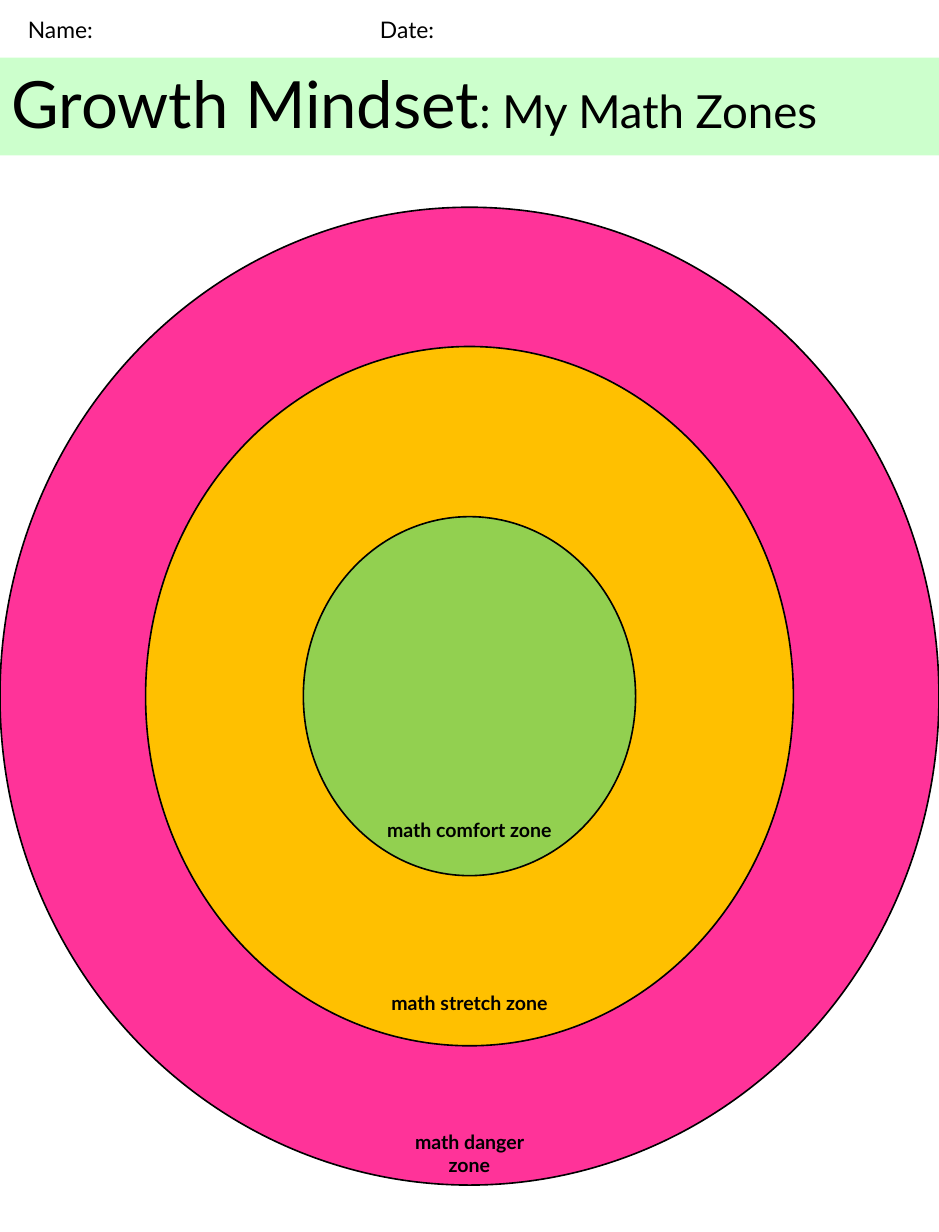
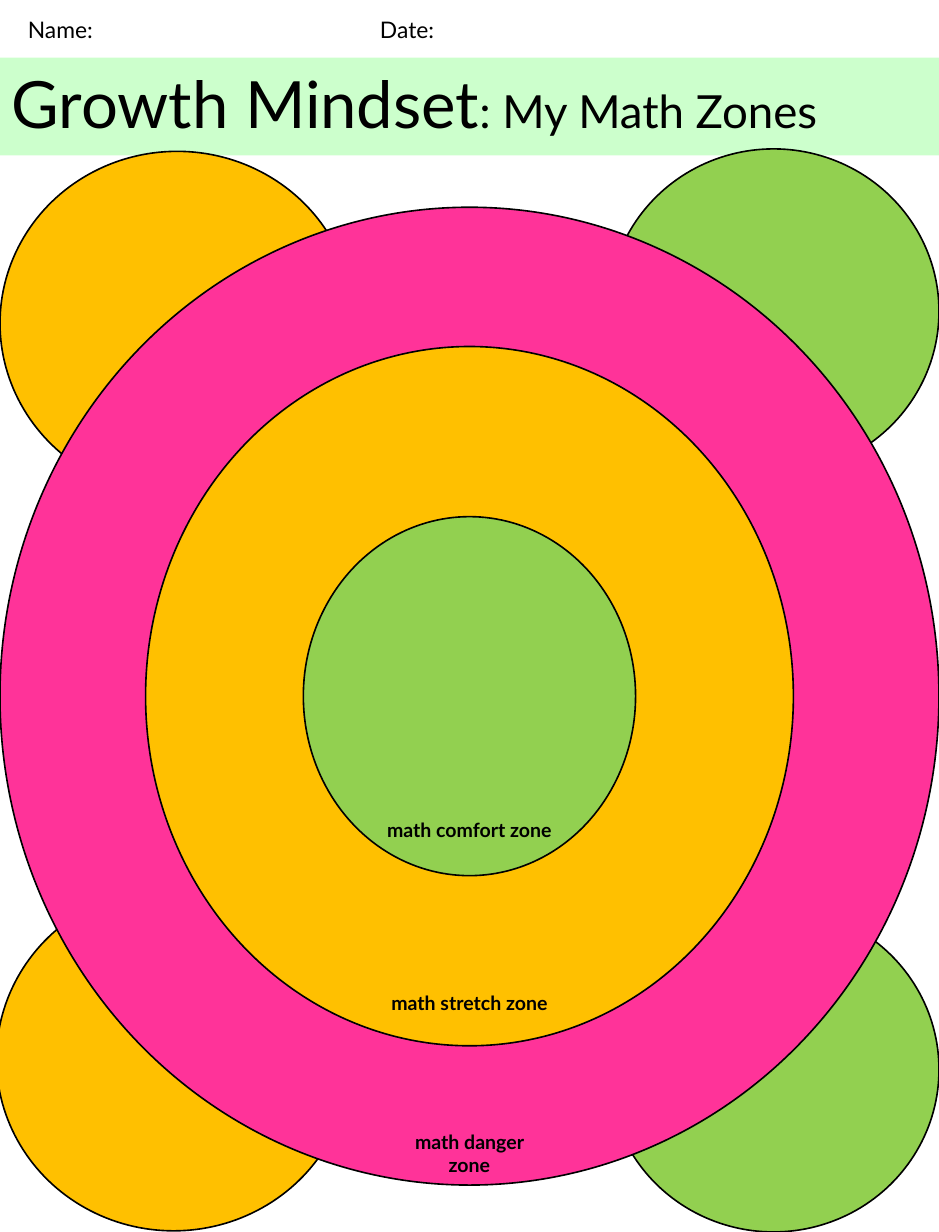
from lxml import etree
from pptx import Presentation
from pptx.dml.color import RGBColor
from pptx.enum import shapes, text
from pptx.oxml import ns
from pptx.util import Pt

WIDTH, HEIGHT = 576, 756
CENTRE_X, CENTRE_Y = WIDTH / 2, 427.2
FONT = "Lato"
COLOURS = {
    "ink": "000000",
    "band": "CCFFCC",
    "danger": "FF3399",
    "stretch": "FFC000",
    "comfort": "92D050",
}

# zone, width, height, label top, label width; outermost first
ZONES = [
    ("danger", 576, 600, 689.8, 103),
    ("stretch", 397.4, 429.1, 604.8, 111.6),
    ("comfort", 203.8, 220.3, 498.2, 119.5),
]

# zone, left, top, width, height
CORNERS = [
    ("stretch", -2.2, 544.3, 217.4, 211),
    ("comfort", 373, 556.6, 203, 199.4),
    ("stretch", 0, 92.9, 217.4, 211),
    ("comfort", 373, 91.4, 203, 199.4),
]


def colour(name):
    return RGBColor.from_string(COLOURS[name])


def set_font(font, size, bold=False):
    font.name = FONT
    font.size = Pt(size)
    font.bold = bold
    font.color.rgb = colour("ink")


def add_circle(slide, zone, left, top, width, height):
    circle = slide.shapes.add_shape(
        shapes.MSO_SHAPE.OVAL, Pt(left), Pt(top), Pt(width), Pt(height))
    circle.shadow.inherit = False
    circle.fill.solid()
    circle.fill.fore_color.rgb = colour(zone)
    circle.line.color.rgb = colour("ink")
    circle.line.width = Pt(1)


def add_text(slide, words, left, top, width, height, size, bold=False,
             align=text.PP_ALIGN.LEFT):
    frame = slide.shapes.add_textbox(
        Pt(left), Pt(top), Pt(width), Pt(height)).text_frame
    frame.word_wrap = True
    frame.auto_size = text.MSO_AUTO_SIZE.SHAPE_TO_FIT_TEXT
    line = frame.paragraphs[0]
    line.text = words
    line.alignment = align
    set_font(line.font, size, bold)
    return line


def add_title_band(slide):
    band = slide.shapes.title
    band.left, band.top, band.width, band.height = Pt(0), Pt(35.3), Pt(WIDTH), Pt(55.4)
    band.fill.solid()
    band.fill.fore_color.rgb = colour("band")
    frame = band.text_frame
    frame.auto_size = text.MSO_AUTO_SIZE.SHAPE_TO_FIT_TEXT
    frame.vertical_anchor = text.MSO_ANCHOR.TOP
    heading = frame.paragraphs[0]
    heading.alignment = text.PP_ALIGN.LEFT
    for words, size in (("Growth Mindset", 40), (": My Math Zones", 28)):
        run = heading.add_run()
        run.text = words
        set_font(run.font, size)


def add_name_line(slide):
    line = add_text(slide, "Name:\t\t\tDate:", 10, 5.8, 537, 24.5, 14)
    # Tab stops one inch apart
    stops = etree.Element(ns.qn("a:tabLst"))
    for inch in (1, 2, 3):
        etree.SubElement(stops, ns.qn("a:tab"), pos=str(Pt(72 * inch)), algn="l")
    line._p.get_or_add_pPr().insert_element_before(stops, "a:defRPr", "a:extLst")


def add_zones(slide):
    # Concentric circles, then their labels on top
    for zone, width, height, _, _ in ZONES:
        add_circle(slide, zone, CENTRE_X - width / 2, CENTRE_Y - height / 2,
                   width, height)
    for zone, _, _, top, width in reversed(ZONES):
        add_text(slide, f"math {zone} zone", CENTRE_X - width / 2, top, width, 36,
                 12, bold=True, align=text.PP_ALIGN.CENTER)


def add_worksheet(deck, corners=()):
    slide = deck.slides.add_slide(deck.slide_layouts[5])
    add_title_band(slide)
    for corner in corners:
        add_circle(slide, *corner)
    add_zones(slide)
    add_name_line(slide)


def main():
    deck = Presentation()
    deck.slide_width, deck.slide_height = Pt(WIDTH), Pt(HEIGHT)
    add_worksheet(deck)
    add_worksheet(deck, CORNERS)
    deck.save("out.pptx")


if __name__ == "__main__":
    main()
